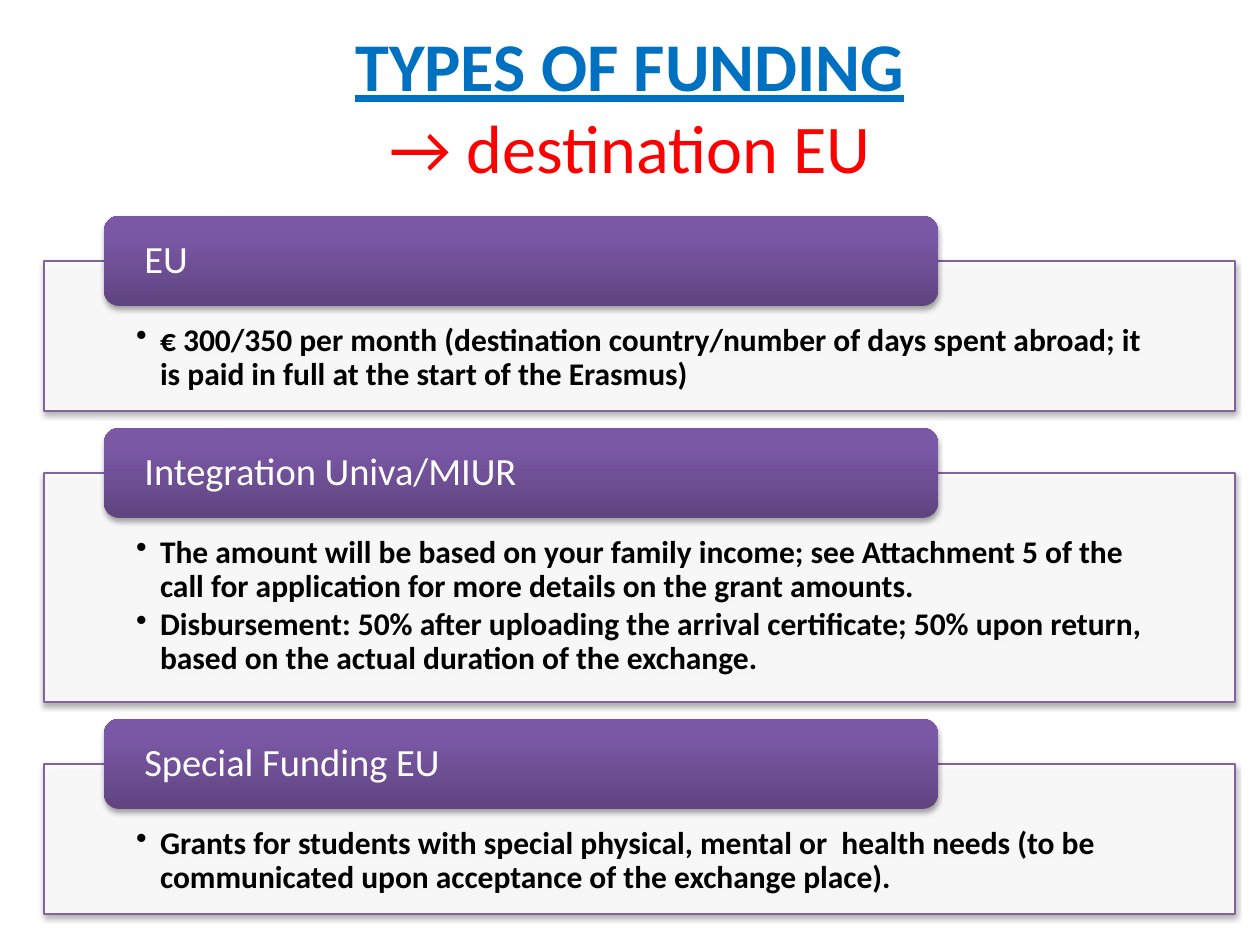
"""Build the slide on types of funding for EU destinations."""
import lxml.etree
import pptx
import pptx.dml.color
import pptx.enum.shapes
import pptx.enum.text
import pptx.oxml
import pptx.oxml.ns
import pptx.util

PX = 914400 / 126
NAMESPACE = pptx.oxml.ns.nsdecls("a")
SHADOW = (
    f'<a:outerShdw {NAMESPACE} blurRad="40000" dist="23000" dir="5400000" rotWithShape="0">'
    '<a:srgbClr val="000000"><a:alpha val="35000"/></a:srgbClr></a:outerShdw>'
)
GRADIENT = (
    f'<a:gradFill {NAMESPACE} rotWithShape="1"><a:gsLst>'
    '<a:gs pos="0"><a:srgbClr val="5F4480"/></a:gs>'
    '<a:gs pos="80000"><a:srgbClr val="7B58A6"/></a:gs>'
    '<a:gs pos="100000"><a:srgbClr val="7C57A8"/></a:gs>'
    '</a:gsLst><a:lin ang="16200000" scaled="0"/></a:gradFill>'
)
SHAPES = pptx.enum.shapes.MSO_SHAPE
ANCHOR = pptx.enum.text.MSO_ANCHOR
ALIGN = pptx.enum.text.PP_ALIGN


def add_run(paragraph, text, size, color, bold=False, underline=False):
    run = paragraph.add_run()
    run.text = text
    run.font.name = "Calibri"
    run.font.size = pptx.util.Pt(size)
    run.font.bold = bold
    run.font.underline = underline
    run.font.color.rgb = pptx.dml.color.RGBColor.from_string(color)


def add_card(kind, box, insets, anchor):
    shape = slide.shapes.add_shape(kind, *[round(value * PX) for value in box])
    shape.shadow.inherit = False
    effects = shape._element.spPr.find(pptx.oxml.ns.qn("a:effectLst"))
    effects.append(pptx.oxml.parse_xml(SHADOW))
    frame = shape.text_frame
    frame.word_wrap = True
    frame.vertical_anchor = anchor
    frame.margin_left, frame.margin_top, frame.margin_right, frame.margin_bottom = [
        round(value * PX) for value in insets
    ]
    return shape


presentation = pptx.Presentation()
presentation.slide_width = round(1260 * PX)
presentation.slide_height = round(945 * PX)
slide = presentation.slides.add_slide(presentation.slide_layouts[6])

title = slide.shapes.add_textbox(*[round(value * PX) for value in (63, 27, 1134, 157)])
title.text_frame.word_wrap = True
title.text_frame.vertical_anchor = ANCHOR.MIDDLE
paragraph = title.text_frame.paragraphs[0]
paragraph.alignment = ALIGN.CENTER
add_run(paragraph, "TYPES OF FUNDING", 39, "0070C0", bold=True, underline=True)
paragraph.add_line_break()
add_run(paragraph, "→ destination EU", 39, "FF0000")

sections = [
    ("EU", 150, [
        "€ 300/350 per month (destination country/number of days spent abroad; "
        "it is paid in full at the start of the Erasmus)",
    ]),
    ("Integration Univa/MIUR", 229, [
        "The amount will be based on your family income; see Attachment 5 of the "
        "call for application for more details on the grant amounts.",
        "Disbursement: 50% after uploading the arrival certificate; 50% upon return, "
        "based on the actual duration of the exchange.",
    ]),
    ("Special Funding EU", 150, [
        "Grants for students with special physical, mental or  health needs "
        "(to be communicated upon acceptance of the exchange place).",
    ]),
]

header_top, header_height, gap = 216, 90, 17
for heading, panel_height, bullets in sections:
    panel_top = header_top + header_height // 2
    panel = add_card(SHAPES.RECTANGLE, (44, panel_top, 1191, panel_height), (92, 63, 92, 18), ANCHOR.TOP)
    panel.fill.solid()
    panel.fill.fore_color.rgb = pptx.dml.color.RGBColor.from_string("FFFFFF")
    fill_color = panel._element.spPr.find(".//" + pptx.oxml.ns.qn("a:srgbClr"))
    lxml.etree.SubElement(fill_color, pptx.oxml.ns.qn("a:alpha"), val="90000")
    panel.line.color.rgb = pptx.dml.color.RGBColor.from_string("8064A2")
    panel.line.width = pptx.util.Pt(0.75)
    for index, bullet in enumerate(bullets):
        frame = panel.text_frame
        paragraph = frame.add_paragraph() if index else frame.paragraphs[0]
        paragraph.alignment = ALIGN.LEFT
        paragraph.level = 1
        paragraph.line_spacing = 0.9
        paragraph.space_after = pptx.util.Pt(2.7)
        properties = paragraph._p.get_or_add_pPr()
        properties.set("marL", str(round(24 * PX)))
        properties.set("indent", str(round(-24 * PX)))
        lxml.etree.SubElement(properties, pptx.oxml.ns.qn("a:buChar"), char="•")
        add_run(paragraph, bullet, 18, "000000", bold=True)

    header = add_card(SHAPES.ROUNDED_RECTANGLE, (104, header_top, 834, header_height), (36, 4, 36, 4), ANCHOR.MIDDLE)
    header.line.fill.background()
    geometry = header._element.spPr.find(pptx.oxml.ns.qn("a:prstGeom"))
    geometry.addnext(pptx.oxml.parse_xml(GRADIENT))
    paragraph = header.text_frame.paragraphs[0]
    paragraph.alignment = ALIGN.LEFT
    paragraph.line_spacing = 0.9
    add_run(paragraph, heading, 22, "FFFFFF")

    header_top = panel_top + panel_height + gap

presentation.save("out.pptx")
